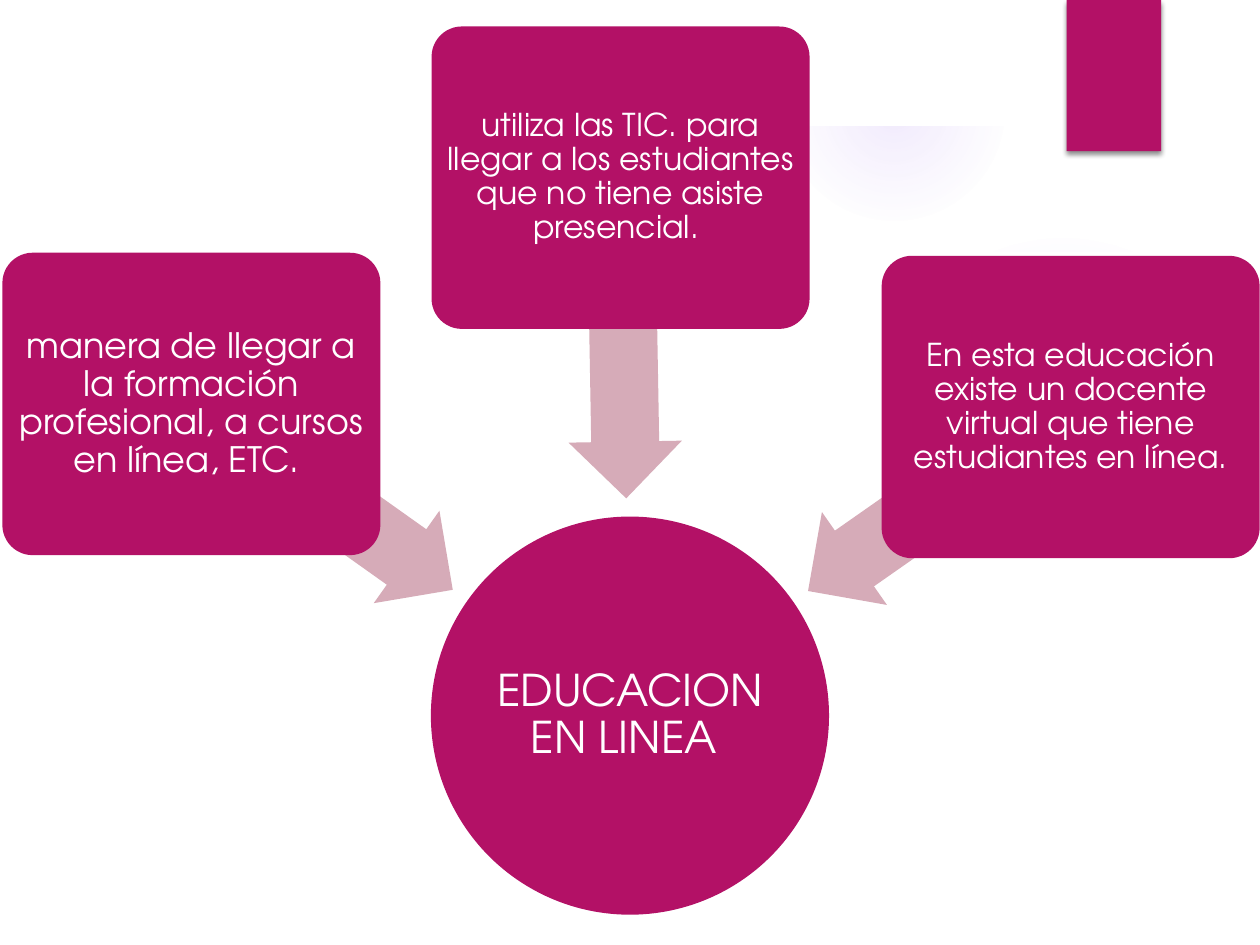
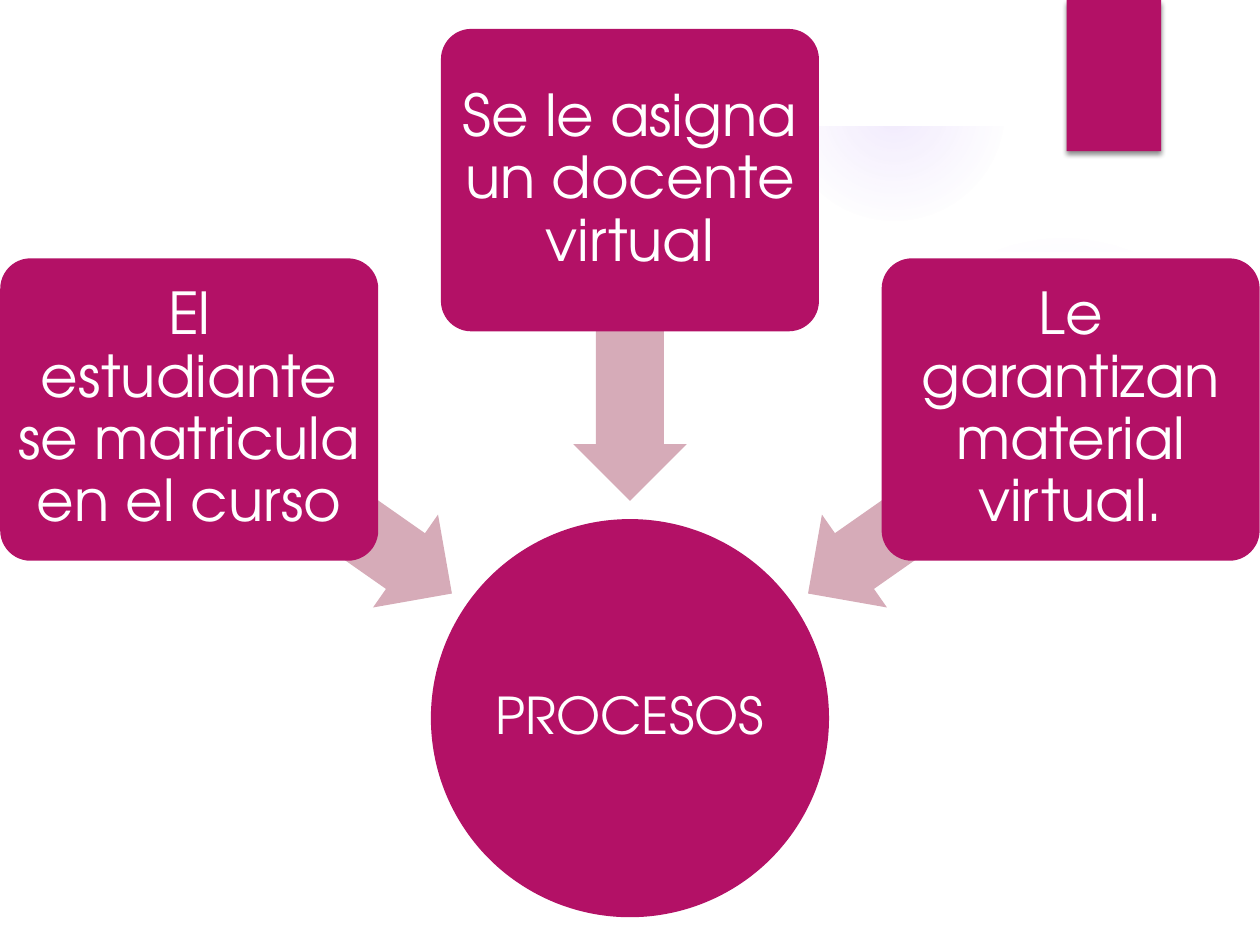
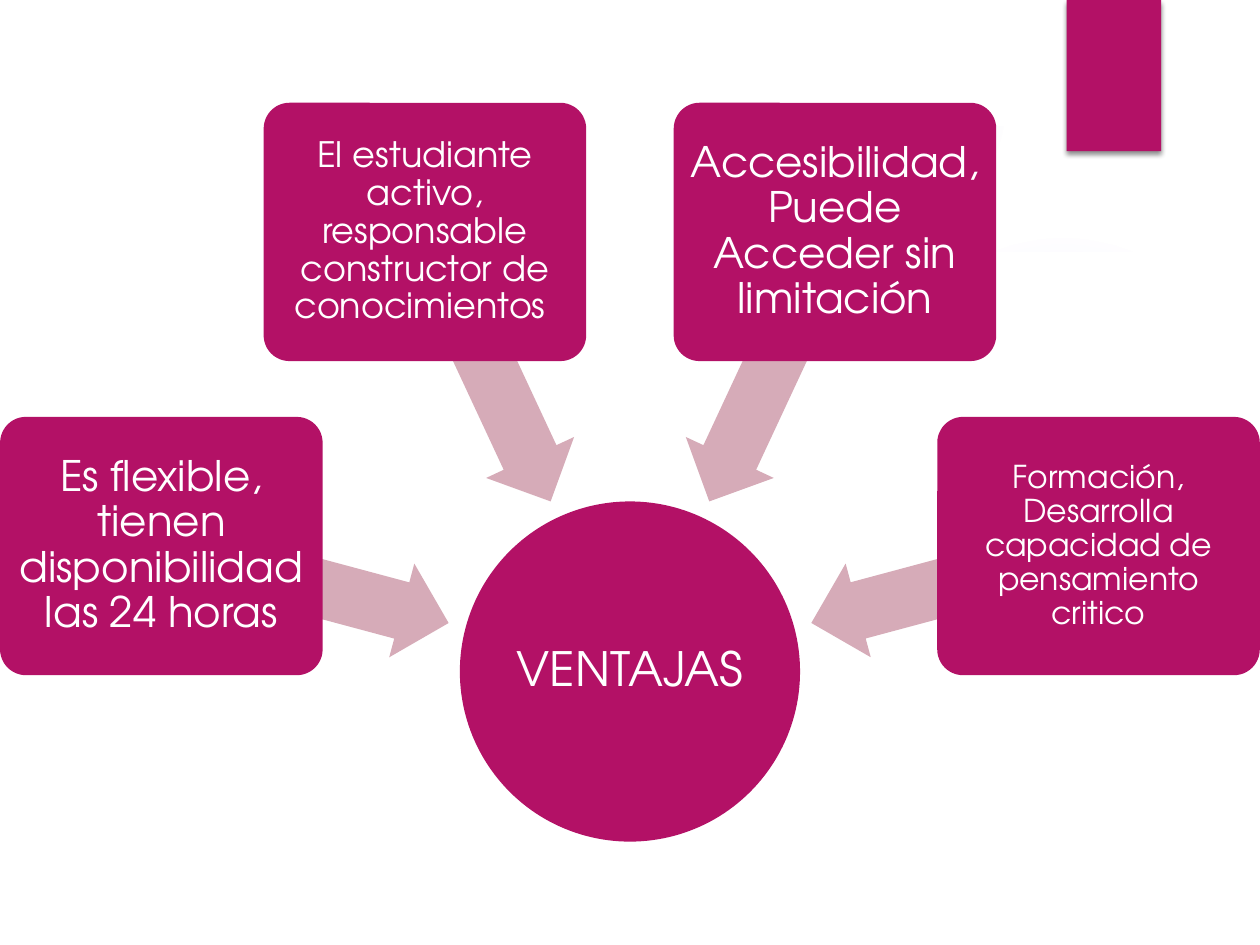
import math

import lxml.etree
import pptx
import pptx.dml.color
import pptx.enum.shapes
import pptx.enum.text
import pptx.oxml
import pptx.oxml.ns
import pptx.util

Inches = pptx.util.Inches
SHAPES = pptx.enum.shapes.MSO_SHAPE

COLORS = {
    "magenta": "B31166",
    "arrow": "D6ABB8",
    "glow": "9B6BF2",
    "white": "FFFFFF",
    "shadow": "000000",
}
FONT = "TeX Gyre Adventor"

LARGE = {"diameter": 3.16, "box": (3, 2.4), "arrow": (2.55, 0.9),
         "box_radius": 4.27, "arrow_radius": 3}
SMALL = {"diameter": 2.7, "box": (2.56, 2.05), "arrow": (2.36, 0.77),
         "box_radius": 3.85, "arrow_radius": 2.67}

DIAGRAMS = [
    {
        "hub": ("EDUCACION EN LINEA ", 25), "center": (5, 5.68), "sizes": LARGE,
        "nodes": [
            (215.4, "manera de llegar a la formación profesional, a cursos en línea, ETC. ", 20, 0.04),
            (269, "utiliza las TIC. para llegar a los estudiantes que no tiene asiste presencial. ", 18, 0.04),
            (325, "En esta educación existe un docente virtual que tiene estudiantes en línea.", 18, 0.04),
        ],
    },
    {
        "hub": ("PROCESOS ", 29), "center": (5, 5.7), "sizes": LARGE,
        "nodes": [
            (215, "El estudiante se matricula en el curso", 33, 0.07),
            (270, "Se le asigna un docente virtual", 33, 0.07),
            (325, "Le garantizan material virtual.", 33, 0.07),
        ],
    },
    {
        "hub": ("VENTAJAS ", 27), "center": (5, 5.33), "sizes": SMALL,
        "nodes": [
            (195, "Es flexible, tienen disponibilidad las 24 horas", 24, 0.05),
            (245, "El estudiante activo, responsable constructor de conocimientos ", 20, 0.04),
            (295, "Accesibilidad, Puede Acceder sin limitación", 24, 0.05),
            (345, "Formación, Desarrolla capacidad de pensamiento critico", 18, 0.04),
        ],
    },
]

GLOWS = [
    (0, 3.17, 2.58, [(0, 8), (36, 8), (72, 0)]),
    (6.89, 1.83, 3.08, [(0, 7), (36, 6), (69, 0)]),
    (6.22, 0, 1.75, [(0, 14), (36, 7), (73, 0)]),
    (6.89, 6.42, 1.08, [(0, 14), (36, 7), (66, 0)]),
    (0, 2.92, 4.58, [(0, 11), (36, 10), (75, 0)]),
]
SWOOSH_CENTER = (8.26, 2.13)
SWOOSH_ANGLE = 350.2
SWOOSH = [
    (6.99, 2.34), (7.49, 2.32), (8.2, 2.26), (8.95, 2.17), (9.56, 2.08), (9.51, 1.74),
    (9.26, 1.82), (9.01, 1.9), (8.75, 1.96), (8.5, 2.03), (8.26, 2.08), (8.01, 2.13),
    (7.77, 2.18), (7.54, 2.21), (7.32, 2.25), (7.1, 2.28), (6.96, 2.29),
]
PANEL = [
    (0.53, 2.03), (0.53, 6.99), (9.47, 6.99), (9.47, 2.03), (8.66, 2.15), (7.85, 2.24),
    (7.04, 2.29), (6.25, 2.33), (5.48, 2.34), (4.74, 2.34), (4.04, 2.33), (3.38, 2.3),
    (2.77, 2.26), (2.22, 2.22), (1.73, 2.17), (1.32, 2.13), (0.99, 2.09), (0.74, 2.06),
]
FRAME_OUTSIDE = [(0, 0), (0, 7.5), (10, 7.5), (10, 0)]
FRAME_INSIDE = [(9.45, 6.95), (0.56, 6.95), (0.56, 0.56), (9.45, 0.56)]


def rgb(name):
    return pptx.dml.color.RGBColor.from_string(COLORS[name])


def paint(shape, color):
    shape.shadow.inherit = False
    shape.fill.solid()
    shape.fill.fore_color.rgb = rgb(color)
    shape.line.fill.background()
    return shape


def add_centered(slide, kind, center, size, color):
    left, top = (middle - length / 2 for middle, length in zip(center, size))
    box = [Inches(value) for value in (left, top, *size)]
    return paint(slide.shapes.add_shape(kind, *box), color)


def add_outline(slide, color, *contours):
    builder = slide.shapes.build_freeform(*contours[0][0], scale=Inches(1))
    builder.add_line_segments(contours[0][1:])
    for contour in contours[1:]:
        builder.move_to(*contour[0])
        builder.add_line_segments(contour[1:])
    return paint(builder.convert_to_shape(), color)


def add_glow(slide, left, top, diameter, stops):
    center = (left + diameter / 2, top + diameter / 2)
    glow = add_centered(slide, SHAPES.OVAL, center, (diameter, diameter), "glow")
    stop_xml = "".join(
        f'<a:gs pos="{position * 1000}"><a:srgbClr val="{COLORS["glow"]}">'
        f'<a:alpha val="{alpha * 1000}"/></a:srgbClr></a:gs>'
        for position, alpha in stops)
    gradient = pptx.oxml.parse_xml(
        f'<a:gradFill {pptx.oxml.ns.nsdecls("a")}><a:gsLst>{stop_xml}</a:gsLst>'
        '<a:path path="circle"><a:fillToRect l="50000" t="50000" r="50000" b="50000"/>'
        '</a:path></a:gradFill>')
    properties = glow.element.spPr
    properties.replace(properties.find(pptx.oxml.ns.qn("a:solidFill")), gradient)


def turn(points, center, degrees):
    cosine, sine = math.cos(math.radians(degrees)), math.sin(math.radians(degrees))
    offsets = [(x - center[0], y - center[1]) for x, y in points]
    return [(center[0] + x * cosine - y * sine, center[1] + x * sine + y * cosine)
            for x, y in offsets]


def add_flag(slide):
    flag = add_centered(slide, SHAPES.RECTANGLE, (8.84, 0.6), (0.75, 1.2), "magenta")
    effects = flag.element.spPr.find(pptx.oxml.ns.qn("a:effectLst"))
    effects.append(pptx.oxml.parse_xml(
        f'<a:outerShdw {pptx.oxml.ns.nsdecls("a")} blurRad="{pptx.util.Pt(3)}" '
        f'dist="{pptx.util.Pt(2)}" dir="5400000" algn="t" rotWithShape="0">'
        f'<a:srgbClr val="{COLORS["shadow"]}"><a:alpha val="45000"/></a:srgbClr>'
        '</a:outerShdw>'))


def build_background(slide, layout):
    for placeholder in list(layout.placeholders):
        layout.shapes.element.remove(placeholder.element)
    for glow in GLOWS:
        add_glow(slide, *glow)
    swoosh = add_outline(slide, "white", turn(SWOOSH, SWOOSH_CENTER, -SWOOSH_ANGLE))
    swoosh.rotation = SWOOSH_ANGLE
    color = swoosh.element.spPr.find(".//" + pptx.oxml.ns.qn("a:srgbClr"))
    lxml.etree.SubElement(color, pptx.oxml.ns.qn("a:alpha"), val="20000")
    add_outline(slide, "white", PANEL)
    add_outline(slide, "white", FRAME_OUTSIDE, FRAME_INSIDE)
    add_flag(slide)
    for shape in list(slide.shapes):
        layout.shapes.element.append(shape.element)


def write(shape, text, size, margin):
    frame = shape.text_frame
    frame_format = {"word_wrap": True, "vertical_anchor": pptx.enum.text.MSO_ANCHOR.MIDDLE}
    for side in ("left", "top", "right", "bottom"):
        frame_format[f"margin_{side}"] = Inches(margin)
    for name, value in frame_format.items():
        setattr(frame, name, value)
    paragraph = frame.paragraphs[0]
    paragraph.alignment = pptx.enum.text.PP_ALIGN.CENTER
    paragraph.line_spacing = 0.9
    run = paragraph.add_run()
    run.text = text
    for name, value in {"name": FONT, "size": pptx.util.Pt(size)}.items():
        setattr(run.font, name, value)
    run.font.color.rgb = rgb("white")


def polar(center, radius, degrees):
    angle = math.radians(degrees)
    return center[0] + radius * math.cos(angle), center[1] + radius * math.sin(angle)


def build_diagram(slide, diagram):
    center, sizes = diagram["center"], diagram["sizes"]
    hub = add_centered(slide, SHAPES.OVAL, center, (sizes["diameter"],) * 2, "magenta")
    write(hub, *diagram["hub"], 0.02)
    for angle, text, size, margin in diagram["nodes"]:
        arrow_center = polar(center, sizes["arrow_radius"], angle)
        arrow = add_centered(slide, SHAPES.LEFT_ARROW, arrow_center, sizes["arrow"], "arrow")
        arrow.adjustments[0], arrow.adjustments[1] = 0.6, 0.5
        arrow.rotation = angle
        box_center = polar(center, sizes["box_radius"], angle)
        box = add_centered(slide, SHAPES.ROUNDED_RECTANGLE, box_center, sizes["box"], "magenta")
        box.adjustments[0] = 0.1
        write(box, text, size, margin)


def main():
    presentation = pptx.Presentation()
    presentation.slide_width, presentation.slide_height = Inches(10), Inches(7.5)
    layout = presentation.slide_layouts[6]
    slides = [presentation.slides.add_slide(layout) for diagram in DIAGRAMS]
    build_background(slides[0], layout)
    for slide, diagram in zip(slides, DIAGRAMS):
        build_diagram(slide, diagram)
    presentation.save("out.pptx")


if __name__ == "__main__":
    main()
